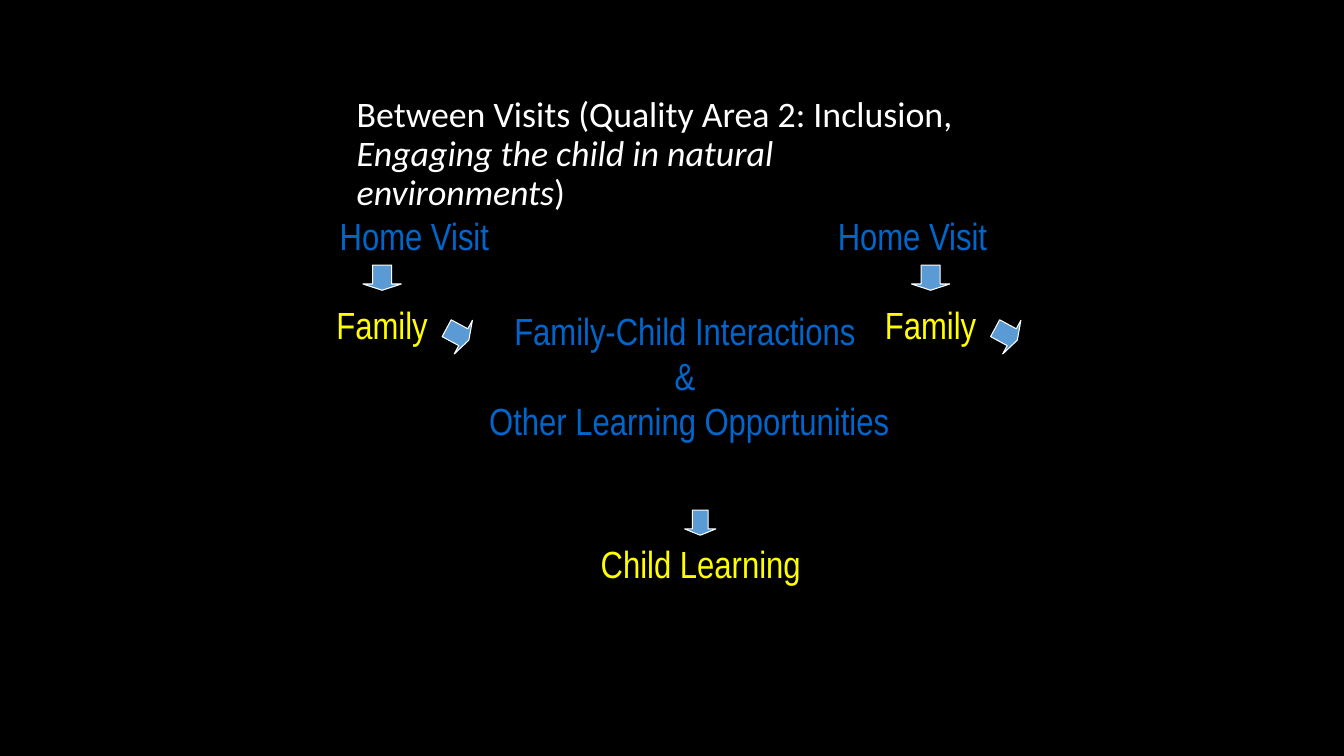
from pptx import Presentation
from pptx.dml.color import RGBColor
from pptx.enum import shapes, text
from pptx.util import Inches, Pt

COLORS = {
    "background": "000000",
    "title": "FFFFFF",
    "activity": "0066CC",
    "people": "FFFF00",
    "arrow": "5B9BD5",
    "arrow_edge": "FFFFFF",
}

deck = Presentation()
deck.slide_width, deck.slide_height = Inches(13.33), Inches(7.5)
slide = deck.slides.add_slide(deck.slide_layouts[6])
slide.background.fill.solid()
slide.background.fill.fore_color.rgb = RGBColor.from_string(COLORS["background"])


def add_label(lines, color, left, top, width, height):
    frame = slide.shapes.add_textbox(
        Inches(left), Inches(top), Inches(width), Inches(height)).text_frame
    frame.word_wrap = False
    frame.margin_left = frame.margin_right = 0
    frame.text = "\n".join(lines)
    for line in frame.paragraphs:
        line.alignment = text.PP_ALIGN.CENTER
        line.runs[0].font.name = "Arial Narrow"
        line.runs[0].font.size = Pt(27)
        line.runs[0].font.color.rgb = RGBColor.from_string(COLORS[color])


def add_down_arrow(left, top, width=0.38, rotation=0):
    arrow = slide.shapes.add_shape(
        shapes.MSO_SHAPE.DOWN_ARROW,
        Inches(left), Inches(top), Inches(width), Inches(0.25))
    arrow.adjustments[0], arrow.adjustments[1] = 0.5, 0.25
    arrow.rotation = rotation
    arrow.shadow.inherit = False
    arrow.fill.solid()
    arrow.fill.fore_color.rgb = RGBColor.from_string(COLORS["arrow"])
    arrow.line.color.rgb = RGBColor.from_string(COLORS["arrow_edge"])
    arrow.line.width = Pt(0.75)


# Title
title = slide.shapes.add_textbox(
    Inches(3.44), Inches(1.05), Inches(6.34), Inches(0.97)).text_frame
title.word_wrap = True
title.vertical_anchor = text.MSO_ANCHOR.MIDDLE
heading = title.paragraphs[0]
heading.line_spacing = 0.9
for wording, italic in [
    ("Between Visits (Quality Area 2: Inclusion, ", False),
    ("Engaging the child in natural environments", True),
    (")", False),
]:
    run = heading.add_run()
    run.text = wording
    for name, value in {"name": "Calibri", "size": Pt(25.6), "italic": italic}.items():
        setattr(run.font, name, value)
    run.font.color.rgb = RGBColor.from_string(COLORS["title"])

# Two home visits, each leading to the family and onwards
for visit_left, family_left in [(3.29, 3.29), (8.23, 8.73)]:
    add_label(["Home Visit"], "activity", visit_left, 2.06, 1.64, 0.47)
    add_label(["Family"], "people", family_left, 2.94, 1, 0.47)
    add_down_arrow(family_left + 0.31, 2.63)
    add_down_arrow(family_left + 1.06, 3.19, rotation=298.4)

# What happens between the visits, and its result
add_label(["Family-Child Interactions ", "& ", "Other Learning Opportunities"],
          "activity", 4.23, 3, 5.21, 1.99)
add_down_arrow(6.79, 5.06, width=0.31)
add_label(["Child Learning"], "people", 4.98, 5.31, 3.94, 0.88)

deck.save("out.pptx")
